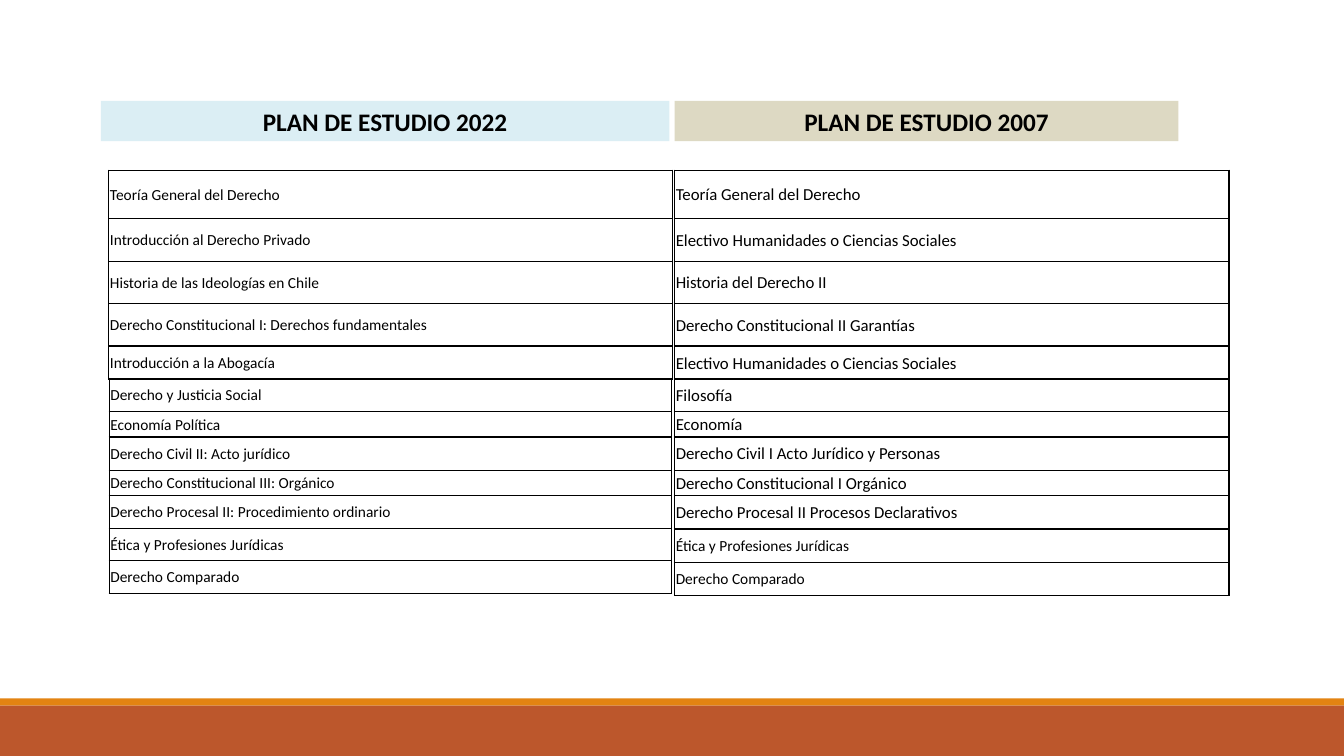
from dataclasses import dataclass

from lxml import etree
from pptx import Presentation
from pptx.dml.color import RGBColor
from pptx.enum.shapes import MSO_SHAPE
from pptx.enum.text import MSO_ANCHOR, PP_ALIGN
from pptx.oxml.ns import qn
from pptx.util import Cm, Pt

RECTANGLE = MSO_SHAPE.RECTANGLE
MIDDLE = MSO_ANCHOR.MIDDLE
LEFT, CENTER = PP_ALIGN.LEFT, PP_ALIGN.CENTER


@dataclass(frozen=True)
class Theme:
    font: str = "Calibri"
    ink: str = "000000"
    new_plan: str = "DBEEF4"
    old_plan: str = "DDD9C3"
    stripe: str = "E38312"
    footer: str = "BC572C"
    heading_size: int = 18
    large_size: int = 12
    small_size: int = 11


THEME = Theme()


def write(frame, text, size, bold=False, align=LEFT):
    frame.word_wrap = True
    paragraph = frame.paragraphs[0]
    paragraph.alignment = align
    paragraph.space_before = Pt(0)
    run = paragraph.add_run()
    run.text = text
    run.font.name = THEME.font
    run.font.size = Pt(size)
    run.font.bold = bold
    run.font.color.rgb = RGBColor.from_string(THEME.ink)


def outline(cell):
    properties = cell._tc.get_or_add_tcPr()
    for side in ("a:lnL", "a:lnR", "a:lnT", "a:lnB"):
        line = etree.SubElement(properties, qn(side), w=str(Pt(1)))
        solid = etree.SubElement(line, qn("a:solidFill"))
        etree.SubElement(solid, qn("a:srgbClr"), val=THEME.ink)


deck = Presentation()
deck.slide_width, deck.slide_height = Cm(33.87), Cm(19.05)
slide = deck.slides.add_slide(deck.slide_layouts.get_by_name("Comparison"))

# Footer bands
for top, height, color in ((17.6, 0.18, THEME.stripe), (17.78, 1.27, THEME.footer)):
    band = slide.shapes.add_shape(RECTANGLE, 0, Cm(top), deck.slide_width, Cm(height))
    band.shadow.inherit = False
    band.fill.solid()
    band.fill.fore_color.rgb = RGBColor.from_string(color)
    band.line.fill.background()

# Plan headings, in the two body placeholders of the comparison
HEADINGS = (
    (1, "PLAN DE ESTUDIO 2022", 2.54, 14.33, THEME.new_plan),
    (3, "PLAN DE ESTUDIO 2007", 17.0, 12.7, THEME.old_plan),
)
for index, title, left, width, color in HEADINGS:
    heading = slide.placeholders[index]
    heading.left, heading.top = Cm(left), Cm(2.54)
    heading.width, heading.height = Cm(width), Cm(1.02)
    heading.fill.solid()
    heading.fill.fore_color.rgb = RGBColor.from_string(color)
    heading.text_frame.vertical_anchor = MIDDLE
    write(heading.text_frame, title, THEME.heading_size, bold=True, align=CENTER)

for unused in (0, 2, 4):
    element = slide.placeholders[unused]._element
    element.getparent().remove(element)

# Courses: (left, top, width, row heights, text sizes, names)
SMALL, LARGE = THEME.small_size, THEME.large_size
FIRST_ROWS = [1.22, 1.07, 1.07, 1.07, 0.84]
SECOND_ROWS = [0.84, 0.64, 0.84, 0.64]
FIRST_TOP, SECOND_TOP = 4.29, 9.53

COURSES = (
    (2.74, FIRST_TOP, 14.2, FIRST_ROWS, [SMALL] * 5, (
        "Teoría General del Derecho",
        "Introducción al Derecho Privado",
        "Historia de las Ideologías en Chile",
        "Derecho Constitucional I: Derechos fundamentales",
        "Introducción a la Abogacía",
    )),
    (2.75, SECOND_TOP, 14.17, SECOND_ROWS + [0.82] * 3, [SMALL] * 7, (
        "Derecho y Justicia Social",
        "Economía Política",
        "Derecho Civil II: Acto jurídico",
        "Derecho Constitucional III: Orgánico",
        "Derecho Procesal II: Procedimiento ordinario",
        "Ética y Profesiones Jurídicas",
        "Derecho Comparado",
    )),
    (17.0, FIRST_TOP, 13.97, FIRST_ROWS, [LARGE] * 5, (
        "Teoría General del Derecho",
        "Electivo Humanidades o Ciencias Sociales",
        "Historia del Derecho II",
        "Derecho Constitucional II Garantías",
        "Electivo Humanidades o Ciencias Sociales",
    )),
    (17.0, SECOND_TOP, 13.97, SECOND_ROWS + [0.84] * 3, [LARGE] * 5 + [SMALL] * 2, (
        "Filosofía",
        "Economía",
        "Derecho Civil I Acto Jurídico y Personas",
        "Derecho Constitucional I Orgánico",
        "Derecho Procesal II Procesos Declarativos",
        "Ética y Profesiones Jurídicas",
        "Derecho Comparado",
    )),
)

# Course tables
for left, top, width, heights, sizes, names in COURSES:
    courses = slide.shapes.add_table(
        len(names), 1, Cm(left), Cm(top), Cm(width), Cm(sum(heights))
    ).table
    courses.first_row = courses.horz_banding = False
    for row, height, size, name in zip(courses.rows, heights, sizes, names):
        row.height = Cm(height)
        cell = row.cells[0]
        cell.margin_left = cell.margin_right = cell.margin_top = Cm(0.03)
        cell.margin_bottom = 0
        cell.vertical_anchor = MIDDLE
        outline(cell)
        cell.fill.background()
        write(cell.text_frame, name, size)

deck.save("out.pptx")
